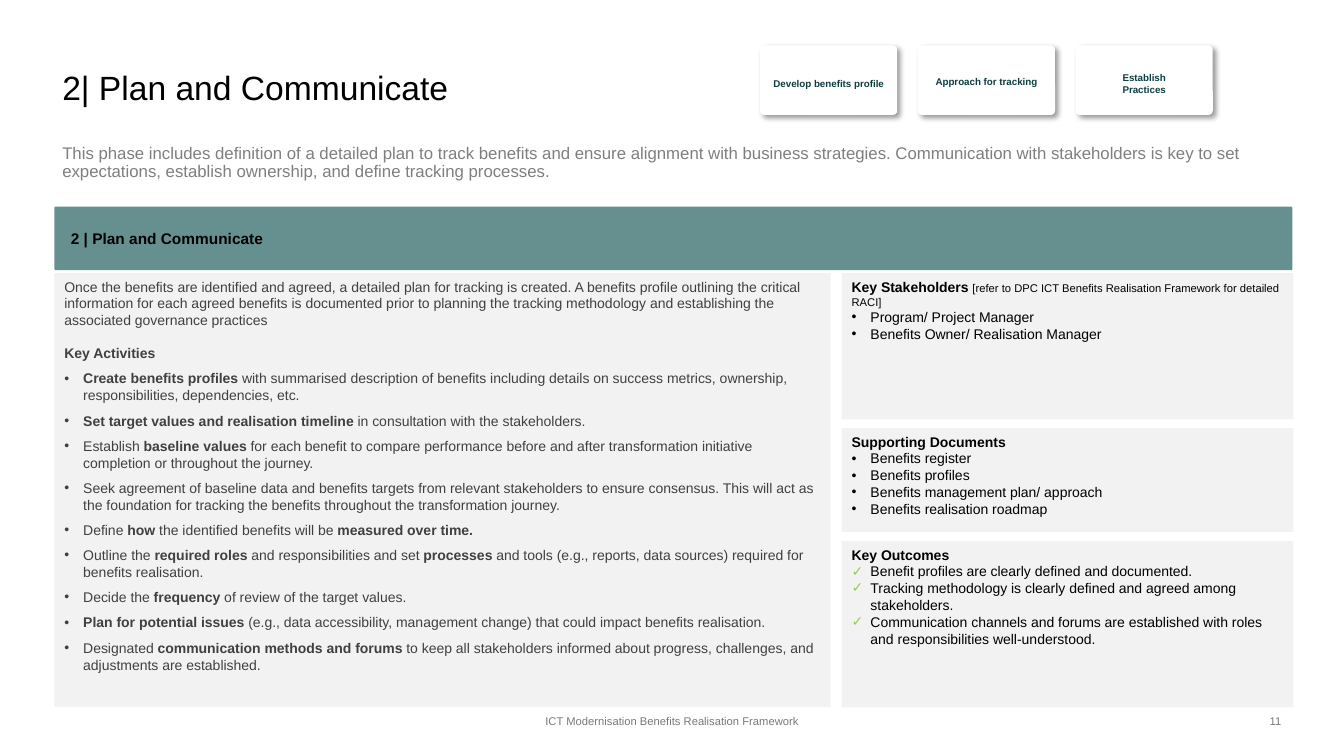
"""Builds the Plan and Communicate slide of a benefits realisation deck."""
from dataclasses import dataclass

from lxml import etree
from pptx import Presentation
from pptx.dml.color import RGBColor
from pptx.enum import shapes, text
from pptx.oxml import ns
from pptx.util import Pt

TITLE = "2| Plan and Communicate"
SUMMARY = ("This phase includes definition of a detailed plan to track benefits and ensure alignment "
           "with business strategies. Communication with stakeholders is key to set expectations, "
           "establish ownership, and define tracking processes.")
BANNER = "2 | Plan and Communicate"
FOOTER = "ICT Modernisation Benefits Realisation Framework"
PAGE_NUMBER = "11"
STEPS = [
    (["Develop benefits profile"], 3.6),
    (["Approach for tracking"], 7.2),
    (["Establish", "Practices"], 3.6),
]
INTRO = ("Once the benefits are identified and agreed, a detailed plan for tracking is created. "
         "A benefits profile outlining the critical information for each agreed benefits is documented "
         "prior to planning the tracking methodology and establishing the associated governance practices")
ACTIVITIES_HEADING = "**Key Activities**"
ACTIVITIES = [
    "**Create benefits profiles **with summarised description of benefits including details on "
    "success metrics, ownership, responsibilities, dependencies, etc.",
    "**Set target values and realisation timeline **in consultation with the stakeholders.",
    "Establish **baseline values **for each benefit to compare performance before and after "
    "transformation initiative completion or throughout the journey.",
    "Seek agreement of baseline data and benefits targets from relevant stakeholders to ensure "
    "consensus. This will act as the foundation for tracking the benefits throughout the "
    "transformation journey.",
    "Define **how** the identified benefits will be **measured over time.**",
    "Outline the **required roles **and responsibilities and set **processes** and tools "
    "(e.g., reports, data sources) required for benefits realisation.",
    "Decide the **frequency** of review of the target values.",
    "**Plan for potential issues **(e.g., data accessibility, management change) that could impact "
    "benefits realisation.",
    "Designated **communication methods and forums **to keep all stakeholders informed about "
    "progress, challenges, and adjustments are established.",
]
SIDE_PANELS = [
    {"heading": "**Key Stakeholders **",
     "note": "[refer to DPC ICT Benefits Realisation Framework for detailed RACI]",
     "bullet": "•", "height": 104.4,
     "items": ["Program/ Project Manager", "Benefits Owner/ Realisation Manager"]},
    {"heading": "**Supporting Documents**", "note": "", "bullet": "•", "height": 74.2,
     "items": ["Benefits register", "Benefits profiles", "Benefits management plan/ approach",
               "Benefits realisation roadmap"]},
    {"heading": "**Key Outcomes**", "note": "", "bullet": "✓", "height": 118.8,
     "items": ["Benefit profiles are clearly defined and documented.",
               "Tracking methodology is clearly defined and agreed among stakeholders.",
               "Communication channels and forums are established with roles and responsibilities "
               "well-understood."]},
]


@dataclass(frozen=True)
class Theme:
    font: str = "Arial"
    black: str = "000000"
    white: str = "FFFFFF"
    grey: str = "7F7F7F"
    footer: str = "797979"
    body: str = "404040"
    step: str = "0D3E40"
    banner: str = "65908F"
    panel: str = "F2F2F2"
    tick: str = "92D050"
    title_size: int = 24
    summary_size: int = 12
    banner_size: int = 11
    body_size: int = 10
    small_size: int = 8
    step_size: int = 7


THEME = Theme()
INSETS = (7.2, 3.6, 7.2, 3.6)
HANGING = 13.5
LEFT, PANEL_TOP = 38.9, 195.1
SIDE_LEFT, SIDE_WIDTH, SIDE_GAP = 601.2, 322.6, 6.4
STEP_LEFT, STEP_PITCH = 543, 112.7
MIDDLE, TOP = text.MSO_ANCHOR.MIDDLE, text.MSO_ANCHOR.TOP
CENTER, RIGHT = text.PP_ALIGN.CENTER, text.PP_ALIGN.RIGHT
RECTANGLE = shapes.MSO_SHAPE.RECTANGLE
ROUNDED = shapes.MSO_SHAPE.ROUNDED_RECTANGLE


def prepare_frame(shape, anchor, insets):
    frame = shape.text_frame
    frame.word_wrap = True
    frame.vertical_anchor = anchor
    frame.margin_left, frame.margin_top, frame.margin_right, frame.margin_bottom = map(Pt, insets)
    return frame


def add_text(slide, box, anchor=TOP):
    return prepare_frame(slide.shapes.add_textbox(*map(Pt, box)), anchor, INSETS)


def add_panel(slide, box, fill, preset=RECTANGLE, radius=None):
    shape = slide.shapes.add_shape(preset, *map(Pt, box))
    shape.shadow.inherit = False
    shape.fill.solid()
    shape.fill.fore_color.rgb = RGBColor.from_string(fill)
    shape.line.fill.background()
    if radius is not None:
        shape.adjustments[0] = radius
    return shape


def add_shadow(shape):
    effects = shape._element.spPr.find(ns.qn("a:effectLst"))
    shadow = etree.SubElement(effects, ns.qn("a:outerShdw"), blurRad=str(Pt(4)), dist=str(Pt(3)),
                              dir="2700000", algn="tl", rotWithShape="0")
    color = etree.SubElement(shadow, ns.qn("a:srgbClr"), val=THEME.black)
    etree.SubElement(color, ns.qn("a:alpha"), val="40000")


def add_bullet(paragraph, bullet):
    properties = paragraph._p.get_or_add_pPr()
    properties.set("marL", str(Pt(HANGING)))
    properties.set("indent", str(-Pt(HANGING)))
    if bullet == "✓":
        color = etree.SubElement(properties, ns.qn("a:buClr"))
        etree.SubElement(color, ns.qn("a:srgbClr"), val=THEME.tick)
    etree.SubElement(properties, ns.qn("a:buFont"), typeface=THEME.font)
    etree.SubElement(properties, ns.qn("a:buChar"), char=bullet)


def write(frame, content, size, color, bullet=None, before=0, align=None, spacing=None):
    """Adds one paragraph, with bold parts between double asterisks."""
    first = frame.paragraphs[0]
    paragraph = frame.add_paragraph() if first.runs else first
    if bullet:
        add_bullet(paragraph, bullet)
    paragraph.alignment = align or text.PP_ALIGN.LEFT
    paragraph.space_before = Pt(before)
    if spacing:
        paragraph.line_spacing = spacing
    for index, part in enumerate(content.split("**")):
        if part:
            add_run(paragraph, part, size, color, index % 2 == 1)
    return paragraph


def add_run(paragraph, content, size, color, bold=False):
    run = paragraph.add_run()
    run.text = content
    run.font.name = THEME.font
    run.font.size = Pt(size)
    run.font.bold = bold
    run.font.color.rgb = RGBColor.from_string(color)


def add_steps(slide):
    for index, (lines, bottom) in enumerate(STEPS):
        box = (STEP_LEFT + index * STEP_PITCH, 32.4, 97.9, 49.7)
        step = add_panel(slide, box, THEME.white, ROUNDED, 0.06)
        add_shadow(step)
        frame = prepare_frame(step, MIDDLE, (0, 8.6, 0, bottom))
        for line in lines:
            write(frame, f"**{line}**", THEME.step_size, THEME.step, align=CENTER)


def add_activities(slide):
    panel = add_panel(slide, (LEFT, PANEL_TOP, 554.4, 309.9), THEME.panel)
    frame = prepare_frame(panel, TOP, INSETS)
    write(frame, INTRO, THEME.body_size, THEME.body)
    write(frame, ACTIVITIES_HEADING, THEME.body_size, THEME.body, before=11.5)
    for activity in ACTIVITIES:
        write(frame, activity, THEME.body_size, THEME.body, bullet="•", before=6)


def add_side_panels(slide):
    top = PANEL_TOP
    for panel in SIDE_PANELS:
        shape = add_panel(slide, (SIDE_LEFT, top, SIDE_WIDTH, panel["height"]), THEME.panel)
        frame = prepare_frame(shape, TOP, INSETS)
        heading = write(frame, panel["heading"], THEME.body_size, THEME.black)
        if panel["note"]:
            add_run(heading, panel["note"], THEME.small_size, THEME.black)
        for item in panel["items"]:
            write(frame, item, THEME.body_size, THEME.black, bullet=panel["bullet"])
        top += panel["height"] + SIDE_GAP


def main():
    presentation = Presentation()
    presentation.slide_width, presentation.slide_height = Pt(960), Pt(540)
    slide = presentation.slides.add_slide(presentation.slide_layouts[6])
    title = add_text(slide, (37.4, 34.6, 884.2, 59), MIDDLE)
    write(title, TITLE, THEME.title_size, THEME.black, spacing=0.9)
    add_steps(slide)
    summary = add_text(slide, (37.4, 100.1, 884.2, 41.8))
    write(summary, SUMMARY, THEME.summary_size, THEME.grey, spacing=0.9)
    banner = add_panel(slide, (LEFT, 147.6, 884.2, 45.4), THEME.banner, ROUNDED, 0.02)
    banner_frame = prepare_frame(banner, MIDDLE, (11.5, 7.2, 7.2, 7.2))
    write(banner_frame, f"**{BANNER}**", THEME.banner_size, THEME.black)
    add_activities(slide)
    add_side_panels(slide)
    for content, left, width, align in ((FOOTER, 318.2, 324, CENTER), (PAGE_NUMBER, 706.3, 216, RIGHT)):
        frame = add_text(slide, (left, 500.4, width, 28.8), MIDDLE)
        write(frame, content, THEME.small_size, THEME.footer, align=align)
    presentation.save("out.pptx")


if __name__ == "__main__":
    main()
